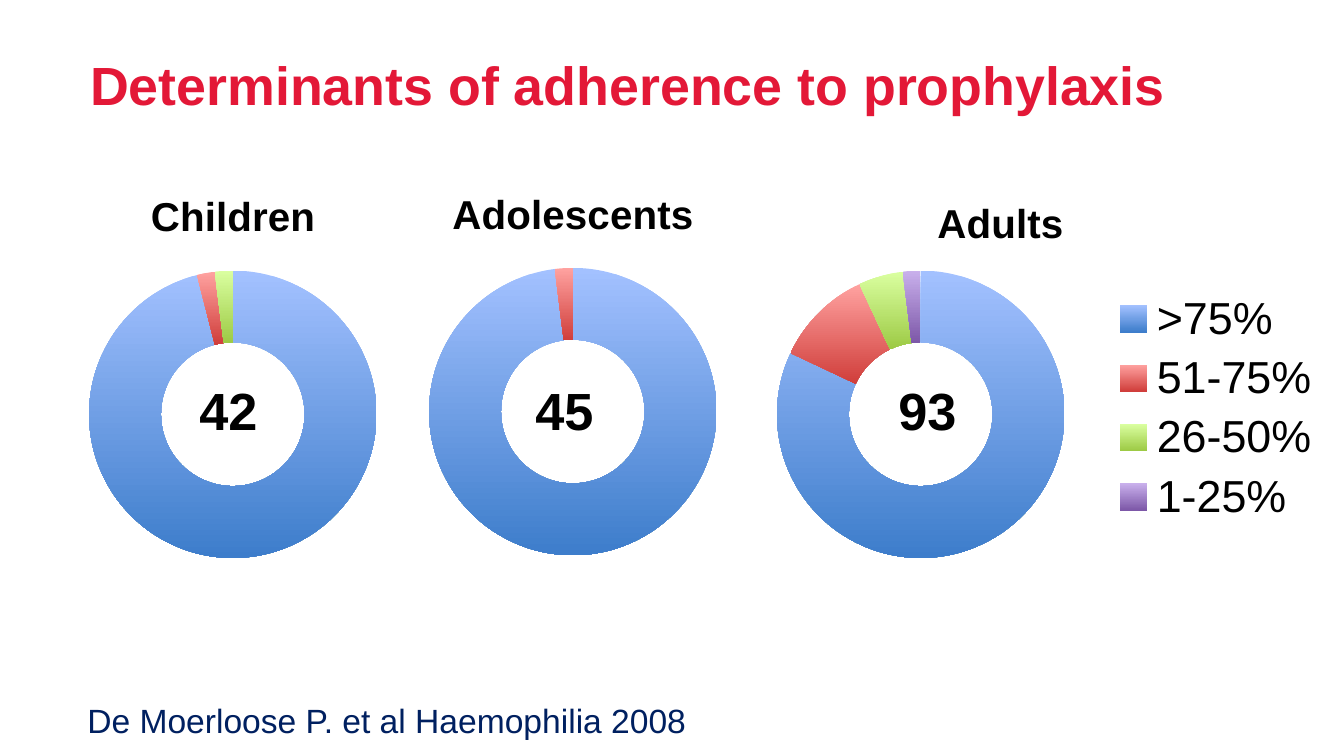
from dataclasses import dataclass

import pptx
import pptx.chart.data
import pptx.dml.color
import pptx.enum.chart
import pptx.enum.text
import pptx.oxml
import pptx.oxml.ns
import pptx.util

Pt = pptx.util.Pt
qn = pptx.oxml.ns.qn


@dataclass(frozen=True)
class Theme:
    font: str = "Arial"
    heading: str = "E31837"
    citation: str = "002060"
    text: str = "000000"
    heading_size: float = 28.8
    citation_size: float = 18
    group_size: float = 21.6
    count_size: float = 28
    legend_size: float = 24
    # Top and bottom of each slice's gradient
    slices: tuple = (
        ("A3C1FF", "3D7DCB"),
        ("FFA2A0", "D03E3B"),
        ("DAFFA0", "9DCA45"),
        ("C9B0EC", "7D58A8"),
    )


THEME = Theme()
RING_SIZE = 154
LEVELS = (">75%", "51-75%", "26-50%", "1-25%")
UNNAMED = ("1", "2", "3", "4")


def style(font, size, color, bold=False):
    font.name = THEME.font
    font.size = Pt(size)
    font.bold = bold
    font.color.rgb = pptx.dml.color.RGBColor.from_string(color)


def add_text(slide, box, text, size, color, bold=False, inset=0, wrap=True):
    left, top, width, height = box
    label = slide.shapes.add_textbox(Pt(left), Pt(top), Pt(width), Pt(height))
    frame = label.text_frame
    frame.word_wrap = wrap
    frame.margin_left = frame.margin_right = 0
    frame.margin_top = frame.margin_bottom = Pt(inset)
    paragraph = frame.paragraphs[0]
    paragraph.text = text
    style(paragraph.font, size, color, bold)
    return paragraph


def place(part, frame_size, left, top, width=None, height=None, inner=False):
    """Fix a chart part at an offset, in points, inside its chart frame."""
    for previous in part.findall(qn("c:layout")):
        part.remove(previous)
    frame_width, frame_height = frame_size
    settings = [("layoutTarget", "inner")] if inner else []
    settings += [("xMode", "edge"), ("yMode", "edge")]
    settings += [("x", left / frame_width), ("y", top / frame_height)]
    if width:
        settings += [("w", width / frame_width), ("h", height / frame_height)]
    layout = pptx.oxml.parse_xml(
        '<c:layout xmlns:c="http://schemas.openxmlformats.org/drawingml/2006/chart">'
        "<c:manualLayout>"
        + "".join(f'<c:{tag} val="{value}"/>' for tag, value in settings)
        + "</c:manualLayout></c:layout>"
    )
    overlay = part.find(qn("c:overlay"))
    if overlay is None:
        part.insert(0, layout)
    else:
        overlay.addprevious(layout)


def add_ring(slide, box, group, shares, levels, ring_offset):
    left, top, width, height = box
    data = pptx.chart.data.CategoryChartData()
    data.categories = levels
    data.add_series("Series 1", shares)
    chart = slide.shapes.add_chart(
        pptx.enum.chart.XL_CHART_TYPE.DOUGHNUT,
        Pt(left), Pt(top), Pt(width), Pt(height), data,
    ).chart
    style(chart.font, 18, THEME.text)
    chart.has_legend = False
    chart.has_title = True
    heading = chart.chart_title.text_frame.paragraphs[0]
    heading.text = group
    style(heading.font, THEME.group_size, THEME.text, bold=True)

    plot = chart.plots[0]
    plot.vary_by_categories = True
    for index, shades in enumerate(THEME.slices):
        slice_format = plot.series[0].points[index].format
        slice_format.line.fill.background()
        fill = slice_format.fill
        fill.gradient()
        fill.gradient_angle = 270
        for stop, shade in zip(fill.gradient_stops, shades):
            stop.color.rgb = pptx.dml.color.RGBColor.from_string(shade)

    plot_area = chart.element.find(".//" + qn("c:plotArea"))
    place(plot_area, (width, height), ring_offset, 55, RING_SIZE, RING_SIZE, inner=True)
    return chart


def add_count(slide, box, count):
    paragraph = add_text(slide, box, count, THEME.count_size, THEME.text,
                         bold=True, inset=3.6, wrap=False)
    paragraph.alignment = pptx.enum.text.PP_ALIGN.CENTER


def add_adults_legend(chart, frame_size):
    chart.has_legend = True
    legend = chart.legend
    legend.position = pptx.enum.chart.XL_LEGEND_POSITION.RIGHT
    legend.include_in_layout = False
    style(legend.font, THEME.legend_size, THEME.text)
    legend_part = chart.element.find(".//" + qn("c:legend"))
    place(legend_part, frame_size, 236, 62.5, 112, 132)
    title_part = chart.element.find(".//" + qn("c:title"))
    place(title_part, frame_size, 139, 11.7)


def add_adherence_slide(presentation):
    slide = presentation.slides.add_slide(presentation.slide_layouts[6])
    add_text(slide, (48.24, 27.5, 637.2, 48.24),
             "Determinants of adherence to prophylaxis",
             THEME.heading_size, THEME.heading, bold=True)
    add_text(slide, (46.8, 371.5, 450.72, 28.08),
             "De Moerloose P. et al Haemophilia 2008",
             THEME.citation_size, THEME.citation, inset=3.6)

    adults_size = (392.4, 219.6)
    adults = add_ring(slide, (359.28, 90, *adults_size), "Adults",
                      (82, 11, 5, 2), LEVELS, 57)
    add_adults_legend(adults, adults_size)
    add_ring(slide, (-41.76, 90, 333.36, 219.6), "Children",
             (96, 2, 2, 0), UNNAMED, 89.5)
    add_ring(slide, (140.4, 88.56, 333.36, 219.6), "Adolescents",
             (98, 2, 0, 0), UNNAMED, 89.5)

    for left, count in ((99.36, "42"), (279.36, "45"), (473.76, "93")):
        add_count(slide, (left, 199, 46.08, 41.04), count)


def main():
    presentation = pptx.Presentation()
    presentation.slide_width = Pt(720)
    presentation.slide_height = Pt(405)
    add_adherence_slide(presentation)
    presentation.save("out.pptx")


if __name__ == "__main__":
    main()
